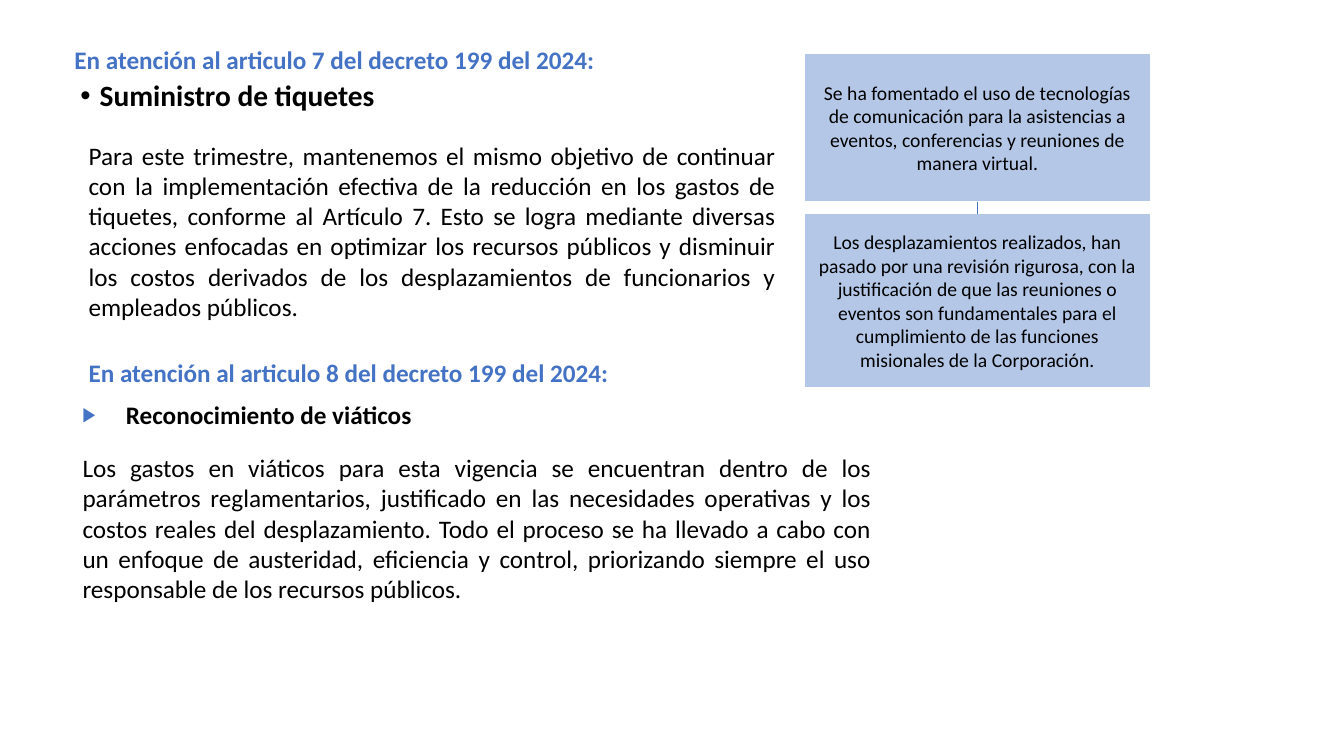
from lxml.etree import SubElement
from pptx import Presentation
from pptx.dml.color import RGBColor
from pptx.enum.shapes import MSO_CONNECTOR, MSO_SHAPE
from pptx.enum.text import MSO_ANCHOR, MSO_AUTO_SIZE, PP_ALIGN
from pptx.oxml.ns import qn
from pptx.util import Inches, Pt

THEME = {
    "font": "Calibri",
    "accent": RGBColor.from_string("4472C4"),
    "panel": RGBColor.from_string("B4C7E7"),
    "white": RGBColor.from_string("FFFFFF"),
    "black": RGBColor.from_string("000000"),
    "topic_size": Pt(21),
    "body_size": Pt(18),
    "panel_size": Pt(14),
}
HEADING = {"size": THEME["body_size"], "bold": True, "color": THEME["accent"]}
BODY = {"size": THEME["body_size"], "bold": False, "color": THEME["black"]}
TOPIC = {"size": THEME["topic_size"], "bold": True, "color": THEME["black"]}
SUBTOPIC = {"size": THEME["body_size"], "bold": True, "color": THEME["black"]}
PANEL = {"size": THEME["panel_size"], "bold": False, "color": THEME["black"]}


def write(frame, text, style, align):
    """Fill a text frame with one styled paragraph and return the paragraph."""
    frame.word_wrap = True
    paragraph = frame.paragraphs[0]
    paragraph.alignment = align
    run = paragraph.add_run()
    run.text = text
    run.font.name = THEME["font"]
    run.font.color.rgb = style["color"]
    for attribute in ("size", "bold"):
        setattr(run.font, attribute, style[attribute])
    return paragraph


def add_bullet(paragraph, char, indent, color, percent):
    properties = paragraph._p.get_or_add_pPr()
    properties.set("marL", str(Inches(indent)))
    properties.set("indent", str(-Inches(indent)))
    bullet_color = SubElement(properties, qn("a:buClr"))
    SubElement(bullet_color, qn("a:srgbClr"), val=str(color))
    SubElement(properties, qn("a:buSzPct"), val=str(percent * 1000))
    SubElement(properties, qn("a:buFont"), typeface="Arial")
    SubElement(properties, qn("a:buChar"), char=char)


deck = Presentation()
deck.slide_width, deck.slide_height = Inches(13.33), Inches(7.5)
slide = deck.slides.add_slide(deck.slide_layouts[6])

# Headings and explanations
passages = [
    (0.64, 0.39, 6.32, 0.4, HEADING, PP_ALIGN.LEFT,
     "En atención al articulo 7 del decreto 199 del 2024:"),
    (0.78, 1.34, 7.01, 1.92, BODY, PP_ALIGN.JUSTIFY,
     "Para este trimestre, mantenemos el mismo objetivo de continuar con la "
     "implementación efectiva de la reducción en los gastos de tiquetes, conforme "
     "al Artículo 7. Esto se logra mediante diversas acciones enfocadas en "
     "optimizar los recursos públicos y disminuir los costos derivados de los "
     "desplazamientos de funcionarios y empleados públicos."),
    (0.78, 3.5, 6.32, 0.4, HEADING, PP_ALIGN.LEFT,
     "En atención al articulo 8 del decreto 199 del 2024:"),
    (0.72, 4.44, 8.02, 1.62, BODY, PP_ALIGN.JUSTIFY,
     "Los gastos en viáticos para esta vigencia se encuentran dentro de los "
     "parámetros reglamentarios, justificado en las necesidades operativas y los "
     "costos reales del desplazamiento. Todo el proceso se ha llevado a cabo con un "
     "enfoque de austeridad, eficiencia y control, priorizando siempre el uso "
     "responsable de los recursos públicos."),
]
for left, top, width, height, style, align, text in passages:
    passage = slide.shapes.add_textbox(
        Inches(left), Inches(top), Inches(width), Inches(height))
    write(passage.text_frame, text, style, align)
    passage.text_frame.auto_size = MSO_AUTO_SIZE.SHAPE_TO_FIT_TEXT

# Bulleted topics
topics = [
    (0.7, 0.76, 3.66, 1.03, TOPIC, 0.9, "Suministro de tiquetes",
     ("•", 0.19, THEME["black"], 100)),
    (0.72, 3.91, 4.86, 0.53, SUBTOPIC, 1.0, "Reconocimiento de viáticos",
     ("▶", 0.43, THEME["accent"], 80)),
]
for left, top, width, height, style, spacing, text, bullet in topics:
    topic = slide.shapes.add_textbox(
        Inches(left), Inches(top), Inches(width), Inches(height))
    paragraph = write(topic.text_frame, text, style, PP_ALIGN.LEFT)
    add_bullet(paragraph, *bullet)
    paragraph.line_spacing = spacing

# Linked measures on the right
measures = [
    (0.53, 1.47,
     "Se ha fomentado el uso de tecnologías de comunicación para la asistencias a "
     "eventos, conferencias y reuniones de manera virtual."),
    (2.12, 1.73,
     "Los desplazamientos realizados, han pasado por una revisión rigurosa, con la "
     "justificación de que las reuniones o eventos son fundamentales para el "
     "cumplimiento de las funciones misionales de la Corporación."),
]
panels = []
for top, height, text in measures:
    panel = slide.shapes.add_shape(
        MSO_SHAPE.RECTANGLE, Inches(7.98), Inches(top), Inches(3.43), Inches(height))
    panel.shadow.inherit = False
    panel.fill.solid()
    panel.fill.fore_color.rgb = THEME["panel"]
    panel.line.color.rgb = THEME["white"]
    panel.line.width = Pt(1)
    panel.text_frame.vertical_anchor = MSO_ANCHOR.MIDDLE
    write(panel.text_frame, text, PANEL, PP_ALIGN.CENTER)
    panels.append(panel)

upper, lower = panels
middle = upper.left + upper.width // 2
link = slide.shapes.add_connector(
    MSO_CONNECTOR.STRAIGHT, middle, upper.top + upper.height, middle, lower.top)
link.begin_connect(upper, 2)
link.end_connect(lower, 0)
link.line.color.rgb = THEME["accent"]
link.line.width = Pt(0.5)
SubElement(link._element.spPr, qn("a:effectLst"))

deck.save("out.pptx")
